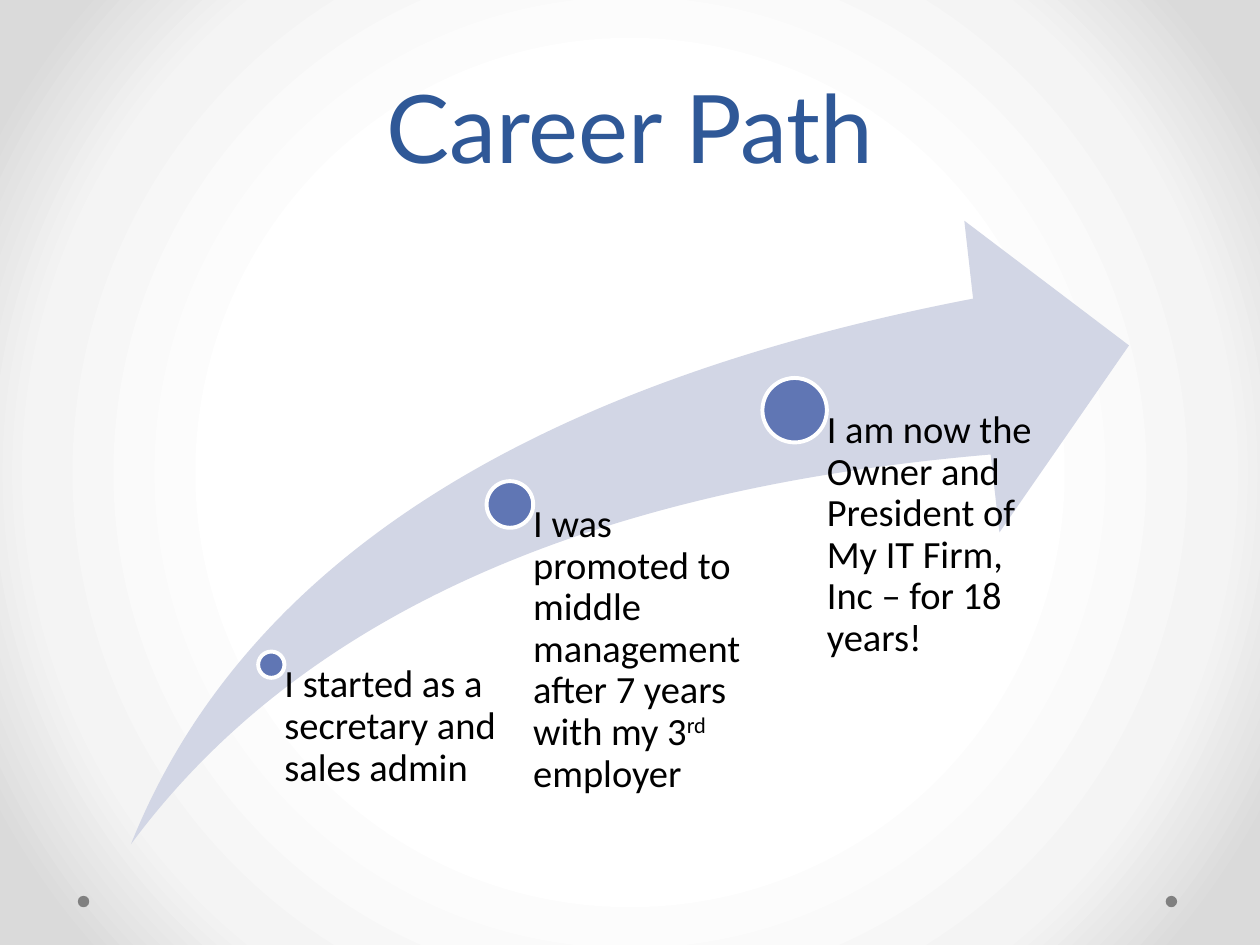
"""Build the Career Path slide: three career steps along a rising arrow."""
from pptx import Presentation
from pptx.dml.color import RGBColor
from pptx.enum.shapes import MSO_SHAPE
from pptx.enum.text import MSO_ANCHOR, PP_ALIGN
from pptx.oxml import parse_xml
from pptx.oxml.ns import nsdecls, qn
from pptx.util import Cm, Pt

OVAL = MSO_SHAPE.OVAL
SWOOSH = MSO_SHAPE.SWOOSH_ARROW
BOTTOM, TOP = MSO_ANCHOR.BOTTOM, MSO_ANCHOR.TOP
CENTER, LEFT = PP_ALIGN.CENTER, PP_ALIGN.LEFT

TITLE_BLUE = RGBColor(0x2F, 0x58, 0x97)
ARROW_BLUE = RGBColor(0xD2, 0xD6, 0xE5)
DOT_BLUE = RGBColor(0x60, 0x76, 0xB4)
GRAY = RGBColor(0x80, 0x80, 0x80)
WHITE = RGBColor(0xFF, 0xFF, 0xFF)
BLACK = RGBColor(0x00, 0x00, 0x00)

BACKDROP_STOPS = [(50, "FFFFFF"), (76, "F4F4F4"), (92, "DADADA")]
ARROW_BOTTOM = 17.02
STEPS = [
    (5.47, 13.4, 0.53, 4.7, ["I started as a secretary and sales admin"]),
    (10.28, 10.17, 0.94, 4.83,
     ["I was promoted to middle management after 7 years with my 3", "rd", " employer"]),
    (16.02, 8.27, 1.3, 4.83,
     ["I am now the Owner and President of My IT Firm, Inc – for 18 years!"]),
]


def add_filled(page, kind, left, top, width, height, color):
    shape = page.shapes.add_shape(kind, Cm(left), Cm(top), Cm(width), Cm(height))
    shape.shadow.inherit = False
    shape.fill.solid()
    shape.fill.fore_color.rgb = color
    shape.line.fill.background()
    return shape


deck = Presentation()
deck.slide_width, deck.slide_height = Cm(25.4), Cm(19.05)
page = deck.slides.add_slide(deck.slide_layouts[5])

page.background.fill.gradient()
gradient = page.element.find(".//" + qn("a:gradFill"))
stops = "".join(
    f'<a:gs pos="{percent * 1000}"><a:srgbClr val="{color}"/></a:gs>'
    for percent, color in BACKDROP_STOPS
)
radial = parse_xml(
    f'<a:gradFill {nsdecls("a")} rotWithShape="1"><a:gsLst>{stops}</a:gsLst>'
    '<a:path path="circle"><a:fillToRect l="50000" t="50000" r="50000" b="50000"/>'
    "</a:path></a:gradFill>"
)
gradient.getparent().replace(gradient, radial)

for left in (23.5, 1.57):
    add_filled(page, OVAL, left, 18.06, 0.23, 0.23, GRAY)

title = page.shapes.title
title.left, title.top, title.width, title.height = Cm(1.27), Cm(0.43), Cm(22.86), Cm(3.38)
title.text_frame.text = "Career Path"
title.text_frame.vertical_anchor = BOTTOM
para = title.text_frame.paragraphs[0]
para.alignment = CENTER
para.line_spacing = Pt(58)
font = para.runs[0].font
font.name, font.size, font.color.rgb = "Lato", Pt(54), TITLE_BLUE

arrow = add_filled(page, SWOOSH, 2.64, 4.45, 20.12, 12.57, ARROW_BLUE)
arrow.adjustments[0] = 0.25
arrow.adjustments[1] = 0.25

for center_x, center_y, diameter, width, pieces in STEPS:
    radius = diameter / 2
    dot = add_filled(page, OVAL, center_x - radius, center_y - radius,
                     diameter, diameter, DOT_BLUE)
    dot.line.color.rgb = WHITE
    dot.line.width = Pt(2.25)

    box = page.shapes.add_textbox(Cm(center_x), Cm(center_y), Cm(width),
                                  Cm(ARROW_BOTTOM - center_y))
    frame = box.text_frame
    frame.word_wrap = True
    frame.vertical_anchor = TOP
    frame.margin_left = Cm(radius)
    frame.margin_top = frame.margin_right = frame.margin_bottom = 0
    para = frame.paragraphs[0]
    para.alignment = LEFT
    para.line_spacing = 0.9
    for piece in pieces:
        span = para.add_run()
        span.text = piece
        span.font.name, span.font.size = "Calibri", Pt(22)
        span.font.color.rgb = BLACK
        if piece == "rd":
            span.font._element.set("baseline", "30000")

deck.save("out.pptx")
